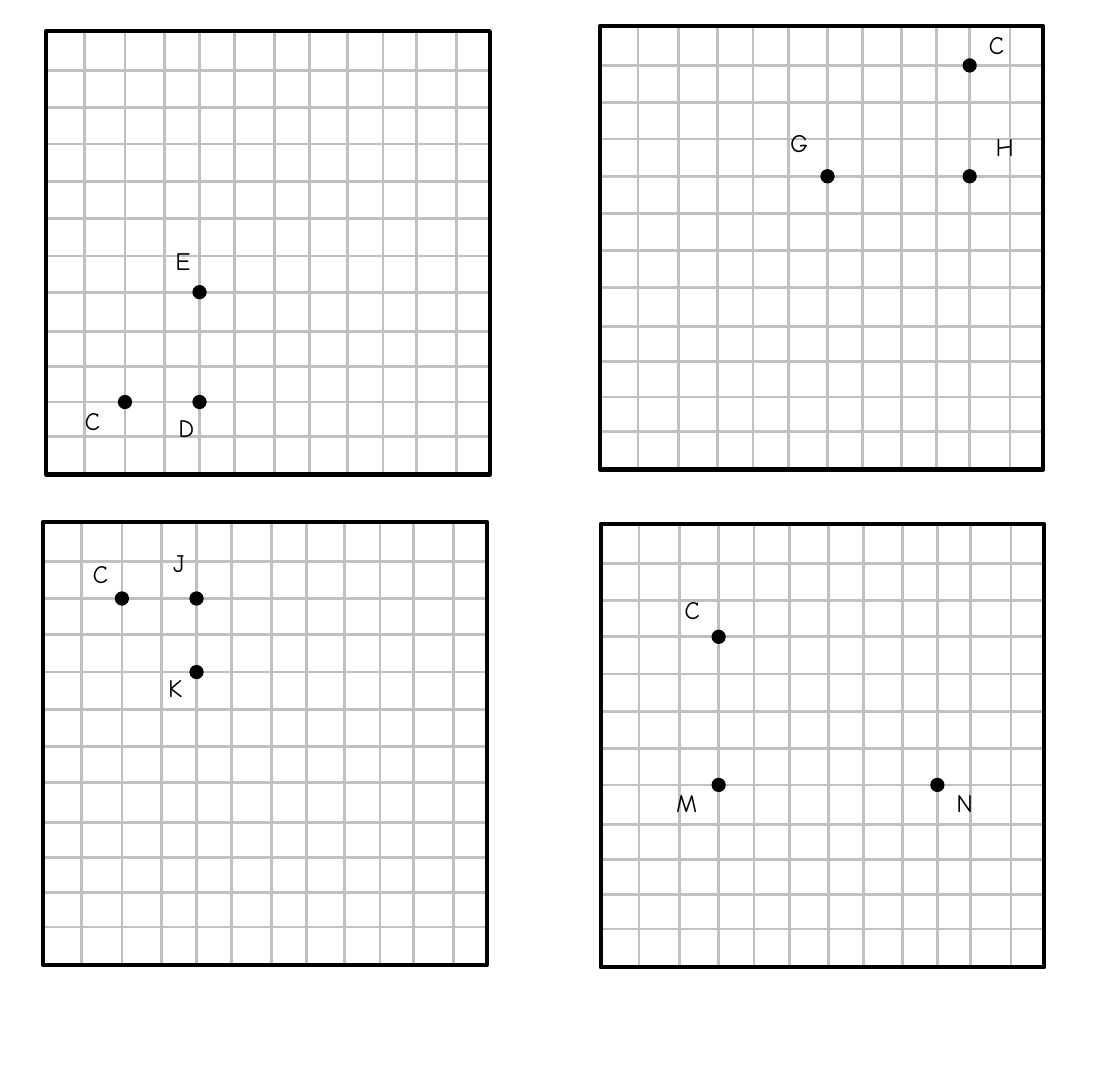
from lxml import etree
from pptx import Presentation
from pptx import util as u
from pptx.dml.color import RGBColor
from pptx.enum import shapes, text
from pptx.oxml.ns import qn

BLACK = RGBColor(0, 0, 0)
GREY = RGBColor(0xC0, 0xC0, 0xC0)
SIDE = 4.4
DOT = 0.1
LABEL_HEIGHT = 0.4

# Distances of the ruled lines from the left and top of a grid, in inches
COLUMNS = [0.38, 0.78, 1.17, 1.52, 1.87, 2.26, 2.61, 2.99, 3.34, 3.67, 4.07]
ROWS = [0.39, 0.76, 1.12, 1.49, 1.86, 2.23, 2.59, 2.98, 3.33, 3.68, 4.02]

# (left, top) of each grid, then its points:
# letter, column line, row line, label offset from the point, label width
GRIDS = [
    ((0.46, 0.31), [("C", 2, 10, (-0.5, -0.02), 0.35),
                    ("D", 4, 10, (-0.31, 0.05), 0.39),
                    ("E", 4, 7, (-0.34, -0.51), 0.35)]),
    ((5.95, 0.26), [("G", 6, 4, (-0.47, -0.54), 0.37),
                    ("C", 10, 1, (0.09, -0.41), 0.35),
                    ("H", 10, 4, (0.16, -0.5), 0.4)]),
    ((0.43, 5.18), [("C", 2, 2, (-0.39, -0.45), 0.35),
                    ("J", 4, 2, (-0.33, -0.56), 0.37),
                    ("K", 4, 4, (-0.38, -0.05), 0.35)]),
    ((5.96, 5.2), [("C", 3, 3, (-0.44, -0.47), 0.35),
                   ("M", 3, 7, (-0.52, -0.03), 0.44),
                   ("N", 9, 7, (0.09, -0.03), 0.41)]),
]


def inches(*lengths):
    return [u.Inches(length) for length in lengths]


def add_rule(group, x1, y1, x2, y2):
    rule = group.shapes.add_connector(
        shapes.MSO_CONNECTOR.STRAIGHT, *inches(x1, y1, x2, y2))
    rule.line.color.rgb = GREY
    rule.line.width = u.Pt(2)
    etree.SubElement(rule.element.spPr, qn("a:effectLst"))


def add_outlined(group, kind, left, top, side):
    outlined = group.shapes.add_shape(kind, *inches(left, top, side, side))
    outlined.shadow.inherit = False
    outlined.fill.background()
    outlined.line.color.rgb = BLACK
    outlined.line.width = u.Pt(3)
    return outlined


def add_point(group, x, y):
    dot = add_outlined(group, shapes.MSO_SHAPE.OVAL,
                       x - DOT / 2, y - DOT / 2, DOT)
    dot.fill.solid()
    dot.fill.fore_color.rgb = BLACK


def add_label(group, letter, left, top, width):
    label = group.shapes.add_textbox(*inches(left, top, width, LABEL_HEIGHT))
    frame = label.text_frame
    frame.word_wrap = False
    frame.auto_size = text.MSO_AUTO_SIZE.SHAPE_TO_FIT_TEXT
    frame.text = letter
    font = frame.paragraphs[0].font
    font.name, font.size = "Comic Neue", u.Pt(18)
    font.color.rgb = BLACK


def add_grid(slide, left, top, points):
    group = slide.shapes.add_group_shape()
    for column in COLUMNS:
        add_rule(group, left + column, top + 0.02,
                 left + column, top + SIDE - 0.02)
    for row in ROWS:
        add_rule(group, left, top + row, left + SIDE, top + row)
    add_outlined(group, shapes.MSO_SHAPE.RECTANGLE, left, top, SIDE)

    for letter, column, row, (dx, dy), width in points:
        x, y = left + COLUMNS[column - 1], top + ROWS[row - 1]
        add_point(group, x, y)
        add_label(group, letter, x + dx, y + dy, width)


def main():
    deck = Presentation()
    deck.slide_width = u.Pt(800)
    deck.slide_height = u.Pt(761)
    slide = deck.slides.add_slide(deck.slide_layouts[6])
    for (left, top), points in GRIDS:
        add_grid(slide, left, top, points)
    deck.save("out.pptx")


if __name__ == "__main__":
    main()
